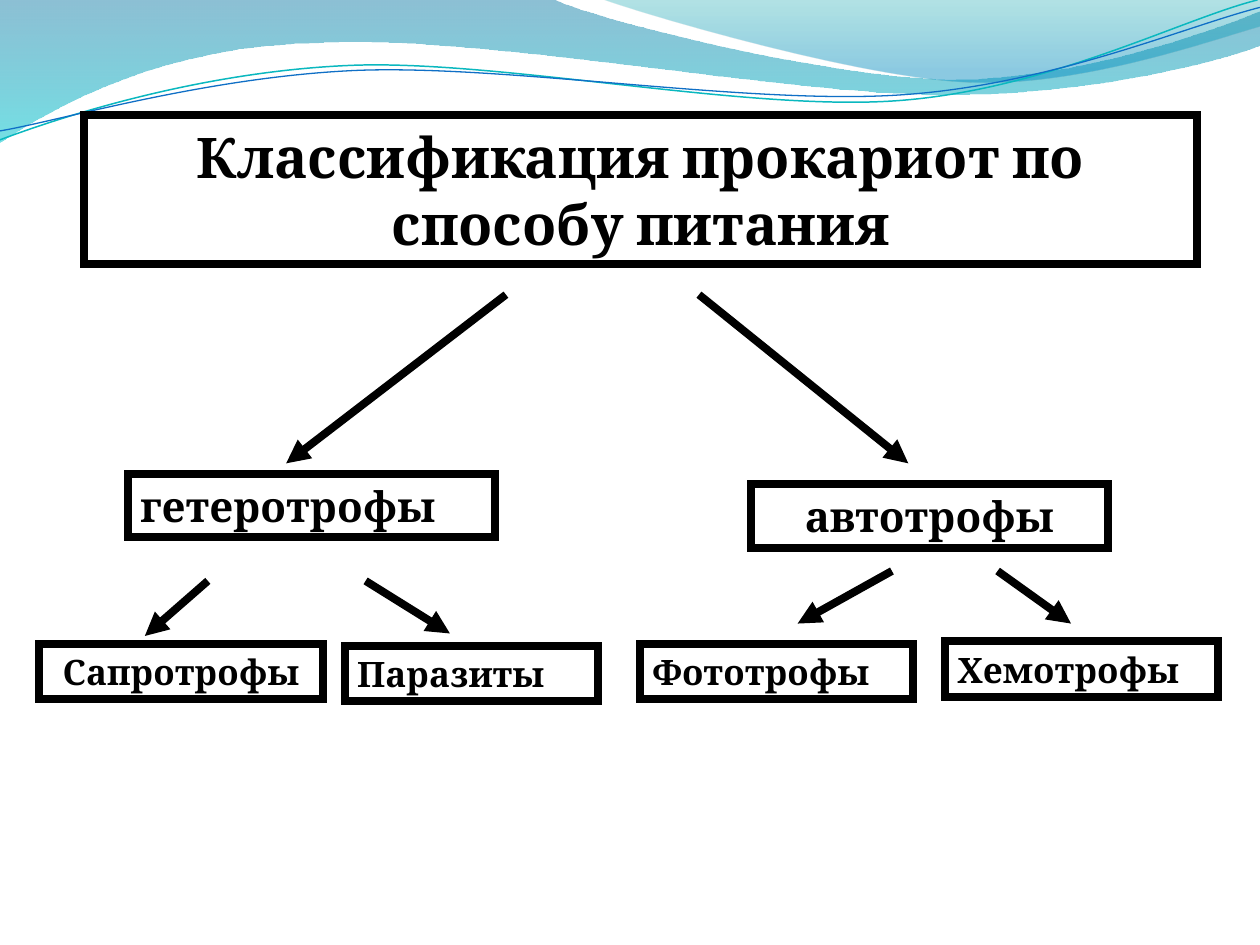
"""Build a slide that classifies prokaryotes by their way of feeding."""
from lxml.etree import SubElement
from pptx import Presentation
from pptx.dml.color import RGBColor
from pptx.enum.shapes import MSO_CONNECTOR, MSO_SHAPE
from pptx.enum.text import MSO_ANCHOR, MSO_AUTO_SIZE, PP_ALIGN
from pptx.oxml.ns import qn
from pptx.util import Cm, Pt


def color(value):
    """Turn a hex string into a colour."""
    return RGBColor.from_string(value)


def draw_curve(page, start, segments, close):
    """Draw an outline from straight (x, y) and cubic (six number) segments."""
    points = [(Cm(x), Cm(y)) for segment in segments
              for x, y in zip(segment[::2], segment[1::2])]
    builder = page.shapes.build_freeform(Cm(start[0]), Cm(start[1]))
    builder.add_line_segments(points, close=close)
    shape = builder.convert_to_shape()
    shape.shadow.inherit = False
    lines = iter(list(shape._element.iter(qn("a:lnTo"))))
    for segment in segments:
        line = next(lines)
        if len(segment) == 6:
            line.addprevious(curve := line.makeelement(qn("a:cubicBezTo")))
            for part in (line, next(lines), next(lines)):
                curve.append(part[0])
                part.getparent().remove(part)
    return shape


deck = Presentation()
deck.slide_width, deck.slide_height = Cm(25.4), Cm(19.05)
page = deck.slides.add_slide(deck.slide_layouts[5])

waves = [
    ((0, 0), [(11.18, 0), (12.09, 0.43, 16.87, 1.6, 19.25, 1.6),
              (21.67, 1.6, 24.33, 0.66, 25.4, 0.23), (25.4, 0.91),
              (24.97, 1.12, 22.1, 1.93, 18.95, 1.91),
              (15.8, 1.9, 9.7, 0.71, 6.53, 0.86),
              (3.28, 0.91, 1.17, 2.11, 0, 2.87)],
     [(0, "0074A1", 45), (1, "00C6CF", 55)]),
    ((12.17, 0), [(12.93, 0.28, 17.32, 1.57, 19.53, 1.65),
                  (21.74, 1.75, 24.41, 0.81, 25.4, 0.53), (25.4, 0)],
     [(0, "00A1A9", 30), (0.8, "008BBF", 45)]),
]
for start, segments, stops in waves:
    wave = draw_curve(page, start, segments, True)
    wave.line.fill.background()
    wave.fill.gradient()
    wave.fill.gradient_angle = 270
    for stop, (position, value, opacity) in zip(wave.fill.gradient_stops, stops):
        stop.position = position
        stop.color.rgb = color(value)
    for node, (position, value, opacity) in zip(wave._element.iter(qn("a:srgbClr")), stops):
        SubElement(node, qn("a:alpha")).set("val", str(opacity * 1000))

strands = [
    ((0, 2.82), [(1.22, 2.36, 4.01, 1.45, 7.04, 1.32),
                 (10.03, 1.19, 15.06, 2.26, 18.11, 2.03),
                 (21.16, 1.8, 23.83, 0.38, 25.35, 0)], "0AB8BF", 0.85),
    ((0, 2.64), [(1.19, 2.44, 4.17, 1.55, 7.19, 1.42),
                 (10.24, 1.3, 15.16, 2.13, 18.21, 1.91),
                 (21.23, 1.7, 23.9, 0.53, 25.4, 0.15)], "0F6FC6", 0.75),
]
for start, segments, value, width in strands:
    strand = draw_curve(page, start, segments, False)
    strand.fill.background()
    strand.line.color.rgb = color(value)
    strand.line.width = Pt(width)

boxes = [
    ("Классификация прокариот по способу питания", 1.7, 2.32, 22.43, 3, 32, PP_ALIGN.CENTER),
    ("гетеротрофы", 2.58, 9.55, 7.4, 1.28, 24, PP_ALIGN.LEFT),
    ("автотрофы", 15.14, 9.75, 7.19, 1.3, 24, PP_ALIGN.CENTER),
    ("Сапротрофы", 0.79, 12.98, 5.72, 1.12, 20, PP_ALIGN.CENTER),
    ("Паразиты", 6.95, 13.02, 5.11, 1.12, 20, PP_ALIGN.LEFT),
    ("Фототрофы", 12.9, 12.98, 5.51, 1.12, 20, PP_ALIGN.LEFT),
    ("Хемотрофы", 19.05, 12.93, 5.51, 1.12, 20, PP_ALIGN.LEFT),
]
for index, (text, left, top, width, height, size, alignment) in enumerate(boxes):
    place = Cm(left), Cm(top), Cm(width), Cm(height)
    if index == 0:
        box = page.shapes.title
        box.left, box.top, box.width, box.height = place
        page.shapes._spTree.append(box._element)
    else:
        box = page.shapes.add_shape(MSO_SHAPE.RECTANGLE, *place)
        box.shadow.inherit = False
    box.fill.background()
    box.line.color.rgb = color("000000")
    box.line.width = Pt(4.5)
    SubElement(box.line._get_or_add_ln(), qn("a:miter")).set("lim", "800000")
    frame = box.text_frame
    frame.word_wrap = True
    frame.auto_size = MSO_AUTO_SIZE.NONE
    frame.vertical_anchor = MSO_ANCHOR.MIDDLE
    paragraph = frame.paragraphs[0]
    paragraph.alignment = alignment
    span = paragraph.add_run()
    span.text = text
    span.font.name = "Cambria"
    span.font.size = Pt(size)
    span.font.bold = True
    span.font.color.rgb = color("000000")

arrows = [
    (10.2, 5.94, 5.77, 9.34),
    (14.09, 5.94, 18.31, 9.34),
    (4.19, 11.71, 2.92, 12.82),
    (7.37, 11.71, 9.07, 12.77),
    (17.98, 11.51, 16.08, 12.57),
    (20.11, 11.51, 21.59, 12.57),
]
for ends in arrows:
    arrow = page.shapes.add_connector(MSO_CONNECTOR.STRAIGHT, *map(Cm, ends))
    arrow.line.color.rgb = color("000000")
    arrow.line.width = Pt(4.5)
    SubElement(arrow.line._get_or_add_ln(), qn("a:tailEnd")).set("type", "triangle")
    SubElement(arrow._element.spPr, qn("a:effectLst"))

deck.save("out.pptx")
